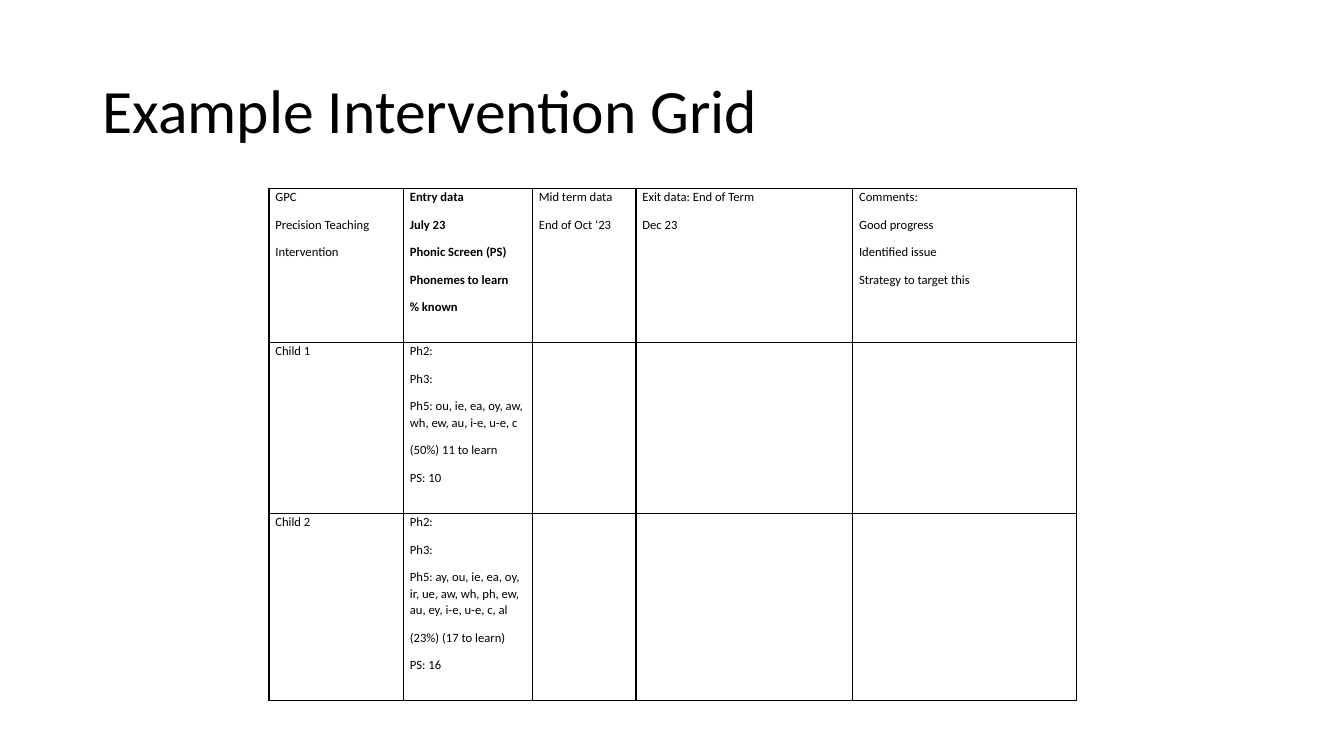
from dataclasses import dataclass

from lxml.etree import SubElement
from pptx import Presentation
from pptx.dml.color import RGBColor
from pptx.enum.text import MSO_ANCHOR as Anchor, MSO_AUTO_SIZE as AutoSize, PP_ALIGN as Align
from pptx.oxml.ns import qn
from pptx.util import Cm, Pt

COLOURS = {"ink": "000000", "border": "000000"}
FONT = "Calibri"
COLUMN_WIDTHS = (3.39, 3.25, 2.61, 5.46, 5.64)


@dataclass
class CellText:
    lines: tuple[str, ...] = ()
    bold: bool = False


@dataclass
class GridRow:
    height: float
    cells: tuple[CellText, ...]


def child_row(height: float, name: str, *entry_data: str) -> GridRow:
    """A child's row, with the later assessments still to be filled in."""
    to_fill = (CellText(),) * (len(COLUMN_WIDTHS) - 2)
    return GridRow(height, (CellText((name,)), CellText(entry_data), *to_fill))


GRID = (
    GridRow(3.88, (
        CellText(("GPC", "Precision Teaching", "Intervention")),
        CellText(("Entry data", "July 23", "Phonic Screen (PS)",
                  "Phonemes to learn", "% known"), bold=True),
        CellText(("Mid term data", "End of Oct ‘23")),
        CellText(("Exit data: End of Term", "Dec 23")),
        CellText(("Comments:", "Good progress", "Identified issue",
                  "Strategy to target this")),
    )),
    child_row(4.31, "Child 1", "Ph2:", "Ph3:",
              "Ph5: ou, ie, ea, oy, aw, wh, ew, au, i-e, u-e, c",
              "(50%) 11 to learn", "PS: 10"),
    child_row(4.72, "Child 2", "Ph2:", "Ph3:",
              "Ph5: ay, ou, ie, ea, oy, ir, ue, aw, wh, ph, ew, au, ey, i-e, u-e, c, al",
              "(23%) (17 to learn)", "PS: 16"),
)


def add_span(para, text: str, size: float, bold: bool = False) -> None:
    span = para.add_run()
    span.text = text
    span.font.name = FONT
    span.font.size = Pt(size)
    span.font.bold = bold
    span.font.color.rgb = RGBColor.from_string(COLOURS["ink"])


def add_borders(cell) -> None:
    properties = cell._tc.get_or_add_tcPr()
    for side in ("a:lnL", "a:lnR", "a:lnT", "a:lnB"):
        line = SubElement(properties, qn(side), w=str(Pt(1)))
        fill = SubElement(line, qn("a:solidFill"))
        SubElement(fill, qn("a:srgbClr"), val=COLOURS["border"])


def fill_cell(cell, content: CellText) -> None:
    cell.margin_left = cell.margin_right = Cm(0.16)
    cell.margin_top = cell.margin_bottom = Cm(0)
    add_borders(cell)
    cell.fill.background()
    frame = cell.text_frame
    for index, text in enumerate(content.lines):
        para = frame.add_paragraph() if index else frame.paragraphs[0]
        para.line_spacing = 1.07
        para.space_after = Pt(8)
        add_span(para, text, 9, content.bold)


def add_title(page, text: str) -> None:
    box = page.shapes.title
    box.left, box.top, box.width, box.height = Cm(2.33), Cm(1.01), Cm(29.21), Cm(3.68)
    frame = box.text_frame
    frame.auto_size = AutoSize.NONE
    frame.vertical_anchor = Anchor.MIDDLE
    para = frame.paragraphs[0]
    para.alignment = Align.LEFT
    para.line_spacing = 0.9
    add_span(para, text, 44)


def add_grid(page, rows: tuple[GridRow, ...]) -> None:
    box = page.shapes.add_table(
        len(rows), len(COLUMN_WIDTHS), Cm(6.78), Cm(4.75),
        Cm(sum(COLUMN_WIDTHS)), Cm(sum(row.height for row in rows)))
    table = box.table
    table.first_row = table.horz_banding = False
    for column, width in zip(table.columns, COLUMN_WIDTHS):
        column.width = Cm(width)
    for table_row, row in zip(table.rows, rows):
        table_row.height = Cm(row.height)
        for cell, content in zip(table_row.cells, row.cells):
            fill_cell(cell, content)


def main() -> None:
    deck = Presentation()
    deck.slide_width, deck.slide_height = Cm(33.87), Cm(19.05)
    page = deck.slides.add_slide(deck.slide_layouts.get_by_name("Title Only"))

    # Heading
    add_title(page, "Example Intervention Grid")

    # Intervention table
    add_grid(page, GRID)

    deck.save("out.pptx")


if __name__ == "__main__":
    main()
